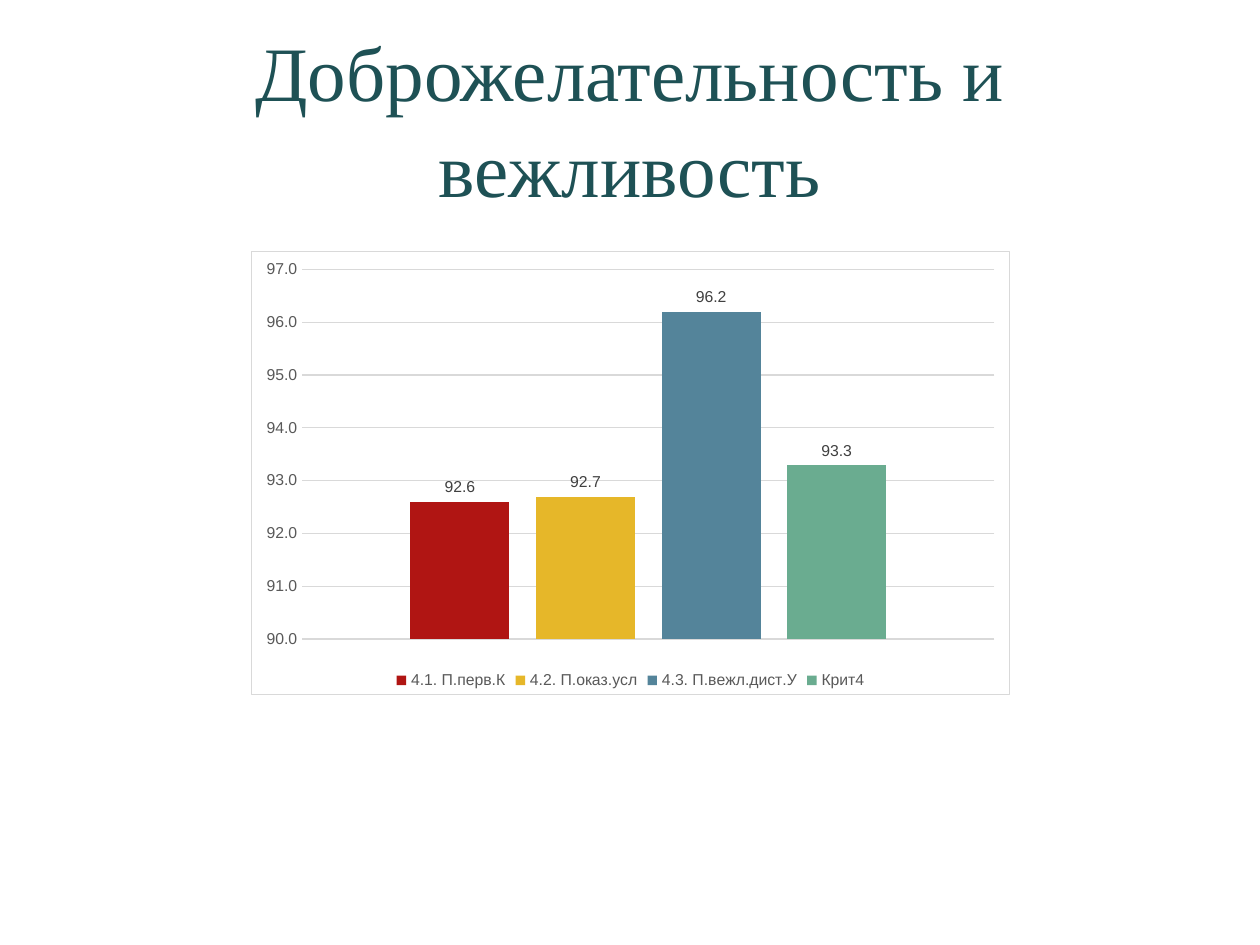
from lxml.etree import fromstring
from pptx import Presentation
from pptx.chart.data import CategoryChartData
from pptx.dml.color import RGBColor
from pptx.enum.chart import XL_CHART_TYPE, XL_LABEL_POSITION, XL_LEGEND_POSITION, XL_TICK_MARK
from pptx.enum.text import MSO_ANCHOR, PP_ALIGN
from pptx.util import Pt

SCORES = [
    ("4.1. П.перв.К", 92.6, "B01513"),
    ("4.2. П.оказ.усл", 92.7, "E6B729"),
    ("4.3. П.вежл.дист.У", 96.2, "54849A"),
    ("Крит4", 93.3, "6AAC90"),
]
BORDER_XML = (
    '<c:spPr xmlns:c="http://schemas.openxmlformats.org/drawingml/2006/chart"'
    ' xmlns:a="http://schemas.openxmlformats.org/drawingml/2006/main">'
    '<a:solidFill><a:srgbClr val="FFFFFF"/></a:solidFill>'
    '<a:ln w="9525"><a:solidFill><a:srgbClr val="{}"/></a:solidFill></a:ln></c:spPr>'
)


def color(code):
    """Turn a hex string into a colour."""
    return RGBColor.from_string(code)


class ScorePage:
    """Holds the style and the current slide."""

    title_color = "1E5155"
    axis_color = "595959"
    label_color = "404040"
    grid_color = "D9D9D9"

    def __init__(self, page):
        """Keep the slide to draw on."""
        self.page = page

    def set_font(self, font, name, size, code):
        """Apply typeface, size and colour."""
        font.name, font.size = name, Pt(size)
        font.color.rgb = color(code)

    def title(self, text, left, top, width, height):
        """Add the centred slide title."""
        box = self.page.shapes.add_textbox(Pt(left), Pt(top), Pt(width), Pt(height))
        frame = box.text_frame
        frame.word_wrap = True
        frame.vertical_anchor = MSO_ANCHOR.MIDDLE
        para = frame.paragraphs[0]
        para.text = text
        para.alignment = PP_ALIGN.CENTER
        para.line_spacing = 1.04
        self.set_font(para.font, "Times New Roman", 44, self.title_color)

    def column_chart(self, scores, left, top, width, height):
        """Add the framed column chart, one series per score."""
        data = CategoryChartData(number_format="0.0")
        data.categories = ["1"]
        for name, value, _ in scores:
            data.add_series(name, [value])
        chart = self.page.shapes.add_chart(
            XL_CHART_TYPE.COLUMN_CLUSTERED, Pt(left), Pt(top), Pt(width), Pt(height), data
        ).chart
        self.set_font(chart.font, "Arial", 10, "000000")
        chart.has_title = False
        chart.has_legend = True
        chart.legend.position = XL_LEGEND_POSITION.BOTTOM
        chart.legend.include_in_layout = False
        self.set_font(chart.legend.font, "Arial", 9, self.axis_color)
        chart.category_axis.visible = False
        self.value_axis(chart.value_axis)
        plot = chart.plots[0]
        plot.gap_width, plot.overlap, plot.vary_by_categories = 219, -27, False
        for series, (_, _, code) in zip(plot.series, scores):
            self.column(series, code)
        border = fromstring(BORDER_XML.format(self.grid_color))
        chart.element.chart.addnext(border)

    def value_axis(self, axis):
        """Style the value axis and its gridlines."""
        axis.minimum_scale, axis.maximum_scale, axis.major_unit = 90, 97, 1
        axis.major_tick_mark = axis.minor_tick_mark = XL_TICK_MARK.NONE
        axis.format.line.fill.background()
        axis.tick_labels.number_format = "0.0"
        axis.tick_labels.number_format_is_linked = False
        self.set_font(axis.tick_labels.font, "Arial", 9, self.axis_color)
        grid = axis.major_gridlines.format.line
        grid.width = Pt(0.75)
        grid.color.rgb = color(self.grid_color)

    def column(self, series, code):
        """Fill one series and label its value."""
        series.format.fill.solid()
        series.format.fill.fore_color.rgb = color(code)
        series.invert_if_negative = False
        labels = series.data_labels
        labels.show_value = True
        labels.position = XL_LABEL_POSITION.OUTSIDE_END
        labels.number_format = "0.0"
        labels.number_format_is_linked = False
        self.set_font(labels.font, "Arial", 9, self.label_color)


def main():
    """Build and save the deck."""
    deck = Presentation()
    deck.slide_width, deck.slide_height = Pt(720), Pt(540)
    page = ScorePage(deck.slides.add_slide(deck.slide_layouts[6]))
    page.title("Доброжелательность и вежливость", 36, 21.6, 648, 90)
    page.column_chart(SCORES, 143.3, 143.3, 434, 254)
    deck.save("out.pptx")


if __name__ == "__main__":
    main()
